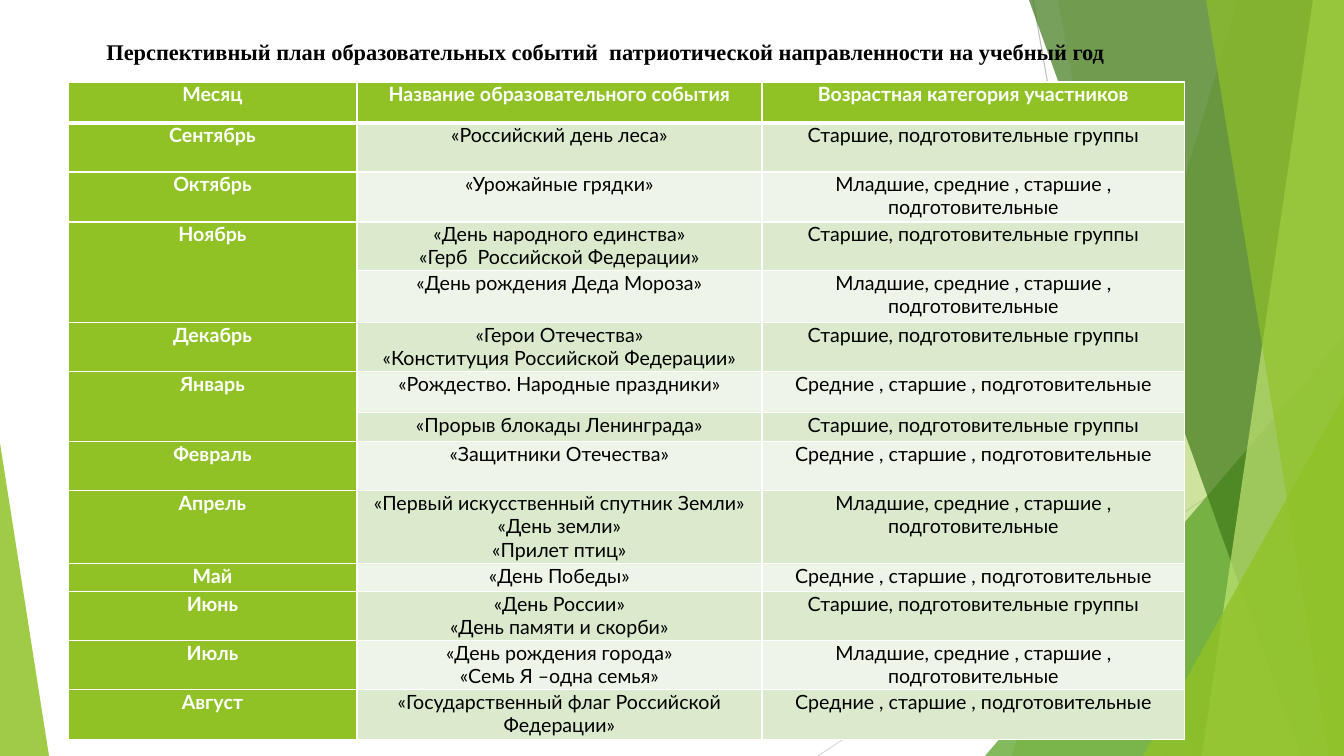
from lxml.etree import SubElement
from pptx import Presentation
from pptx.dml.color import RGBColor
from pptx.enum.shapes import MSO_CONNECTOR, MSO_SHAPE
from pptx.enum.text import MSO_ANCHOR, MSO_AUTO_SIZE, PP_ALIGN
from pptx.oxml.ns import qn
from pptx.util import Pt

TITLE = "Перспективный план образовательных событий  патриотической направленности на учебный год"
HEADER = ("Месяц", "Название образовательного события", "Возрастная категория участников")
SENIOR = "Старшие, подготовительные группы"
MIDDLE = "Средние , старшие , подготовительные"
ALL_AGES = "Младшие, средние , старшие , подготовительные"

EVENTS = [
    ("Сентябрь", "«Российский день леса»", SENIOR),
    ("Октябрь", "«Урожайные грядки»", ALL_AGES),
    ("Ноябрь", "«День народного единства»\n«Герб  Российской Федерации»", SENIOR),
    (None, "«День рождения Деда Мороза»", ALL_AGES),
    ("Декабрь", "«Герои Отечества»\n«Конституция Российской Федерации»", SENIOR),
    ("Январь", "«Рождество. Народные праздники»", MIDDLE),
    (None, "«Прорыв блокады Ленинграда»", SENIOR),
    ("Февраль", "«Защитники Отечества»", MIDDLE),
    ("Апрель", "«Первый искусственный спутник Земли»\n«День земли»\n«Прилет птиц»", ALL_AGES),
    ("Май", "«День Победы»", MIDDLE),
    ("Июнь", "«День России»\n«День памяти и скорби»", SENIOR),
    ("Июль", "«День рождения города»\n«Семь Я –одна семья»", ALL_AGES),
    ("Август", "«Государственный флаг Российской Федерации»", MIDDLE),
]
COL_WIDTHS = (289, 405, 423)
ROW_HEIGHTS = (41, 49, 50, 49, 52, 49, 41, 29, 49, 73, 28, 49, 49, 50)
TABLE_LEFT, TABLE_TOP = 68, 82

WHITE = RGBColor(0xFF, 0xFF, 0xFF)
BLACK = RGBColor(0x00, 0x00, 0x00)
GREEN = RGBColor(0x90, 0xC2, 0x26)
MID_GREEN = RGBColor(0x54, 0xA0, 0x21)
DARK_GREEN = RGBColor(0x3F, 0x78, 0x19)
LIME = RGBColor(0xC0, 0xE4, 0x74)
BAND_DARK = RGBColor(0xDB, 0xE9, 0xCD)
BAND_LIGHT = RGBColor(0xEE, 0xF4, 0xE8)
GREY = RGBColor(0xBF, 0xBF, 0xBF)
LIGHT_GREY = RGBColor(0xD9, 0xD9, 0xD9)

WIDTH, HEIGHT = 1344, 756
SCALE = 12192000 / WIDTH

RAYS = [((1033, 0, 1167, 756), GREY), ((1344, 406, 818, 756), LIGHT_GREY)]
# STRIPE_PLACEHOLDER
FACETS = [
    ("stripe", (1238, 1012), GREEN, 30),
    ("stripe", (1058, 1192), GREEN, 20),
    ("right", (985, 336, 359, 420), MID_GREEN, 72),
    ("stripe", (1029, 1301), DARK_GREEN, 70),
    ("stripe", (1313, 1202), LIME, 70),
    ("stripe", (1206, 1329), GREEN, 65),
    ("right", (1143, 396, 201, 360), GREEN, 80),
    ("left", (0, 443, 49, 313), GREEN, 85),
]


def px(*values):
    return [round(v * SCALE) for v in values]


def add_ray(slide, ends, color):
    line = slide.shapes.add_connector(MSO_CONNECTOR.STRAIGHT, *px(*ends))
    line.line.color.rgb = color
    line.line.width = Pt(0.75)
    SubElement(line._element.spPr, qn("a:effectLst"))


def add_facet(slide, kind, geometry, color, opacity):
    if kind == "stripe":
        top_x, bottom_x = geometry
        builder = slide.shapes.build_freeform(top_x, 0, SCALE)
        builder.add_line_segments([(WIDTH, 0), (WIDTH, HEIGHT), (bottom_x, HEIGHT)])
        sp = builder.convert_to_shape()
    else:
        sp = slide.shapes.add_shape(MSO_SHAPE.ISOSCELES_TRIANGLE, *px(*geometry))
        sp.adjustments[0] = 1 if kind == "right" else 0
    sp.shadow.inherit = False
    sp.line.fill.background()
    sp.fill.solid()
    sp.fill.fore_color.rgb = color
    clr = sp._element.spPr.find(qn("a:solidFill"))[0]
    SubElement(clr, qn("a:alpha"), val=str(opacity * 1000))


def set_borders(cell, widths):
    tcPr = cell._tc.get_or_add_tcPr()
    for side, width in widths.items():
        ln = SubElement(tcPr, qn("a:ln" + side), w=str(Pt(width)))
        fill = SubElement(ln, qn("a:solidFill"))
        SubElement(fill, qn("a:srgbClr"), val=str(WHITE))


def style_runs(tf, name, size, color, bold):
    for p in tf.paragraphs:
        p.alignment = PP_ALIGN.CENTER
        for r in p.runs:
            r.font.name = name
            r.font.size = Pt(size)
            r.font.bold = bold
            r.font.color.rgb = color


def fill_cell(cell, text, row, col):
    cell.margin_left = cell.margin_right = px(5)[0]
    cell.margin_top = cell.margin_bottom = 0
    set_borders(cell, {"L": 1, "R": 1, "T": 3 if row == 1 else 1, "B": 3 if row == 0 else 1})
    heading = row == 0 or col == 0
    cell.fill.solid()
    cell.fill.fore_color.rgb = GREEN if heading else BAND_DARK if row % 2 else BAND_LIGHT
    if text:
        cell.text_frame.text = text
        style_runs(cell.text_frame, "Lato", 14, WHITE if heading else BLACK, heading)


def add_plan(slide):
    rows = [HEADER] + EVENTS
    box = px(TABLE_LEFT, TABLE_TOP, sum(COL_WIDTHS), sum(ROW_HEIGHTS))
    table = slide.shapes.add_table(len(rows), len(HEADER), *box).table
    for column, width in zip(table.columns, px(*COL_WIDTHS)):
        column.width = width
    for table_row, height in zip(table.rows, px(*ROW_HEIGHTS)):
        table_row.height = height
    for i, row in enumerate(rows):
        for j, text in enumerate(row):
            fill_cell(table.cell(i, j), text, i, j)
        if row[0] is None:
            table.cell(i - 1, 0).merge(table.cell(i, 0))


def add_title(slide):
    tf = slide.shapes.add_textbox(*px(68, 33, 1058, 37)).text_frame
    tf.word_wrap = True
    tf.auto_size = MSO_AUTO_SIZE.SHAPE_TO_FIT_TEXT
    tf.vertical_anchor = MSO_ANCHOR.MIDDLE
    tf.margin_left = px(27)[0]
    tf.text = TITLE
    style_runs(tf, "Times New Roman", 16, BLACK, True)


def main():
    prs = Presentation()
    prs.slide_width, prs.slide_height = px(WIDTH, HEIGHT)
    slide = prs.slides.add_slide(prs.slide_layouts[6])
    for ray in RAYS:
        add_ray(slide, *ray)
    for facet in FACETS:
        add_facet(slide, *facet)
    add_plan(slide)
    add_title(slide)
    prs.save("out.pptx")


if __name__ == "__main__":
    main()
